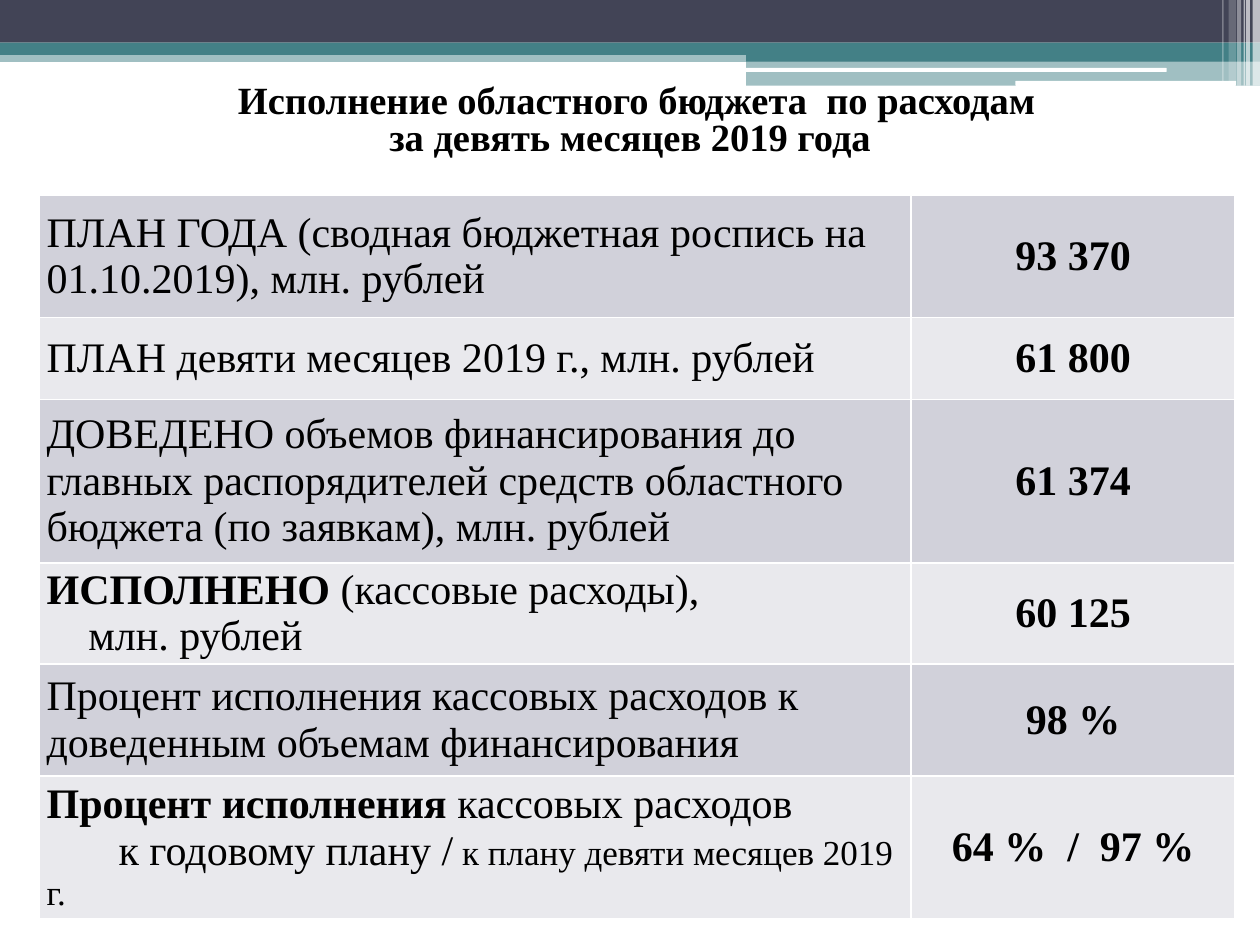
"""Build the slide on regional budget spending for nine months of 2019."""
from dataclasses import dataclass

from lxml.etree import SubElement
from pptx import Presentation
from pptx.dml.color import RGBColor
from pptx.enum.shapes import MSO_SHAPE as Preset
from pptx.enum.text import MSO_ANCHOR as Anchor, PP_ALIGN as Align
from pptx.oxml.ns import qn
from pptx.util import Cm, Pt


@dataclass(frozen=True)
class Theme:
    """Colours and type of the slide."""
    font: str = "Times New Roman"
    ink: str = "000000"
    white: str = "FFFFFF"
    navy: str = "424456"
    teal: str = "438086"
    bands: tuple = ("D1D1DA", "E9E9ED")
    title: float = 22
    title_lead: float = 30
    body: float = 24
    small: float = 20
    border: float = 1


THEME = Theme()
WIDTH, HEIGHT = 25.4, 19.05

BARS = [
    (0, 1.02, WIDTH, 0.23, THEME.teal, 50),
    (0, 0, WIDTH, 0.86, THEME.navy, 100),
    (0, 0.86, WIDTH, 0.25, THEME.teal, 100),
    (15.04, 0.99, 10.36, 0.25, THEME.teal, 100),
    (15.04, 1.22, 10.36, 0.51, THEME.teal, 50),
]
SLITS = [
    (15.01, 1.37, 8.51, 0.08, THEME.white, 100),
    (20.47, 1.63, 4.45, 0.1, THEME.white, 100),
]
STRIPES = [
    (25.25, 0.15, 1.73, 65),
    (25.12, 0.08, 1.73, 65),
    (25.07, 0.03, 1.73, 60),
    (24.94, 0.08, 1.73, 40),
    (24.77, 0.15, 1.63, 20),
    (24.64, 0.03, 1.63, 30),
]

TITLE_BOX = (0, 1.52, WIDTH, 1.73)
TITLE = [
    [(" ", THEME.title_lead, True),
     ("Исполнение областного бюджета  по расходам", THEME.title, True)],
    [("за девять месяцев 2019 года", THEME.title, True)],
]

TABLE_LEFT, TABLE_TOP = 0.79, 3.94
COLUMNS = (17.58, 6.53)


def plain(text):
    """Return one unindented paragraph holding one regular span."""
    return [(0, [(text, THEME.body, False)])]


ROWS = [
    (2.46, plain("ПЛАН ГОДА (сводная бюджетная роспись на 01.10.2019), млн. рублей"), "93 370"),
    (1.65, plain("ПЛАН девяти месяцев 2019 г., млн. рублей"), "61 800"),
    (3.3, plain("ДОВЕДЕНО объемов финансирования до главных распорядителей "
                "средств областного бюджета (по заявкам), млн. рублей"), "61 374"),
    (2.03, [(0, [("ИСПОЛНЕНО ", THEME.body, True),
                 ("(кассовые расходы),", THEME.body, False)]),
            (0.84, [("млн. рублей", THEME.body, False)])], "60 125"),
    (2.26, plain("Процент исполнения кассовых расходов к доведенным "
                 "объемам финансирования"), "98 %"),
    (2.87, [(0, [("Процент исполнения ", THEME.body, True),
                 ("кассовых расходов", THEME.body, False)]),
            (1.45, [("к годовому плану /", THEME.body, False),
                    (" к плану девяти месяцев 2019 г.", THEME.small, False)])],
     "64 %  /  97 %"),
]


def add_bar(page, left, top, width, height, color, opacity, preset=Preset.RECTANGLE):
    """Add a borderless bar of the given opacity in percent."""
    bar = page.shapes.add_shape(preset, Cm(left), Cm(top), Cm(width), Cm(height))
    bar.shadow.inherit = False
    bar.line.fill.background()
    bar.fill.solid()
    bar.fill.fore_color.rgb = RGBColor.from_string(color)
    if opacity < 100:
        tint = bar._element.spPr.find(qn("a:solidFill"))[0]
        SubElement(tint, qn("a:alpha"), val=str(opacity * 1000))


def add_spans(para, spans):
    """Add styled runs to a paragraph."""
    for text, size, bold in spans:
        span = para.add_run()
        span.text = text
        font = span.font
        font.name, font.size, font.bold = THEME.font, Pt(size), bold
        font.color.rgb = RGBColor.from_string(THEME.ink)


def paragraph(frame, index):
    """Return the first paragraph or append another."""
    return frame.add_paragraph() if index else frame.paragraphs[0]


def add_title(page):
    """Add the centred two-line title."""
    box = page.shapes.add_textbox(*map(Cm, TITLE_BOX))
    frame = box.text_frame
    frame.word_wrap = True
    frame.margin_left = frame.margin_right = Cm(0.15)
    frame.margin_top = frame.margin_bottom = Cm(0.03)
    for index, spans in enumerate(TITLE):
        para = paragraph(frame, index)
        para.alignment, para.line_spacing = Align.CENTER, 0.75
        add_spans(para, spans)


def fill_cell(cell, paras, align, color):
    """Fill a cell with text, its band colour and thin white borders."""
    cell.vertical_anchor = Anchor.MIDDLE
    cell.margin_left = cell.margin_right = Cm(0.15)
    cell.margin_top = cell.margin_bottom = 0
    for index, (indent, spans) in enumerate(paras):
        para = paragraph(cell.text_frame, index)
        para.alignment = align
        para.space_before = Pt(0 if index else THEME.body * 0.2)
        para._p.get_or_add_pPr().set("indent", str(Cm(indent)))
        add_spans(para, spans)
    props = cell._tc.get_or_add_tcPr()
    for side in ("a:lnL", "a:lnR", "a:lnT", "a:lnB"):
        edge = SubElement(props, qn(side), w=str(Pt(THEME.border)))
        SubElement(SubElement(edge, qn("a:solidFill")), qn("a:srgbClr"), val=THEME.white)
    cell.fill.solid()
    cell.fill.fore_color.rgb = RGBColor.from_string(color)


def add_budget_table(page):
    """Add the table of plan and spending figures."""
    total = sum(height for height, _, _ in ROWS)
    table = page.shapes.add_table(len(ROWS), len(COLUMNS), Cm(TABLE_LEFT), Cm(TABLE_TOP),
                                  Cm(sum(COLUMNS)), Cm(total)).table
    table.first_row = table.horz_banding = False
    for column, width in zip(table.columns, COLUMNS):
        column.width = Cm(width)
    for index, (height, label, value) in enumerate(ROWS):
        table.rows[index].height = Cm(height)
        color = THEME.bands[index % len(THEME.bands)]
        fill_cell(table.cell(index, 0), label, Align.LEFT, color)
        figure = [(0, [(value, THEME.body, True)])]
        fill_cell(table.cell(index, 1), figure, Align.CENTER, color)


def main():
    """Build and save the deck."""
    deck = Presentation()
    deck.slide_width, deck.slide_height = Cm(WIDTH), Cm(HEIGHT)
    page = deck.slides.add_slide(deck.slide_layouts[6])
    for bar in BARS:
        add_bar(page, *bar)
    for slit in SLITS:
        add_bar(page, *slit, preset=Preset.ROUNDED_RECTANGLE)
    for left, width, height, opacity in STRIPES:
        add_bar(page, left, 0, width, height, THEME.white, opacity)
    add_title(page)
    add_budget_table(page)
    deck.save("out.pptx")


if __name__ == "__main__":
    main()
